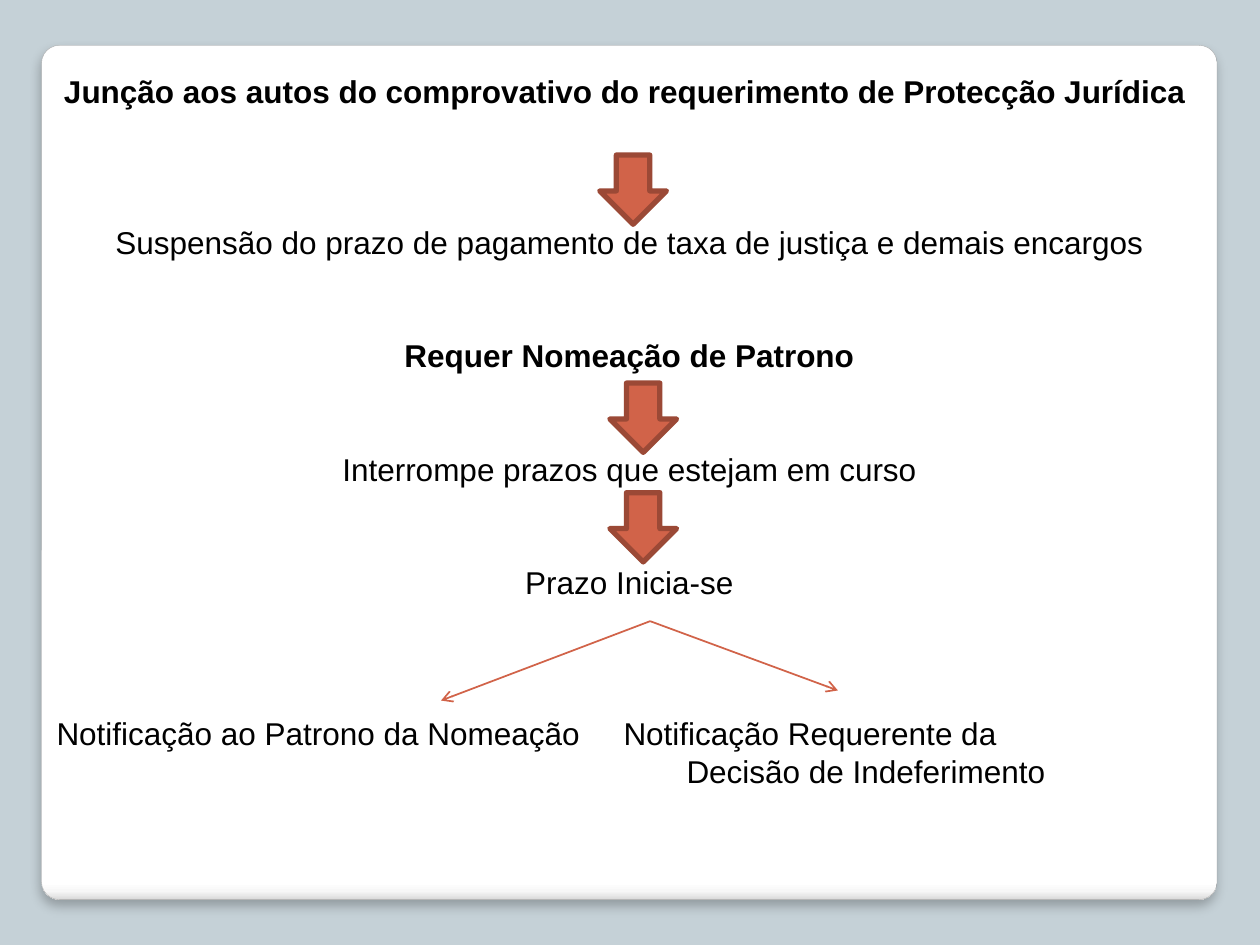
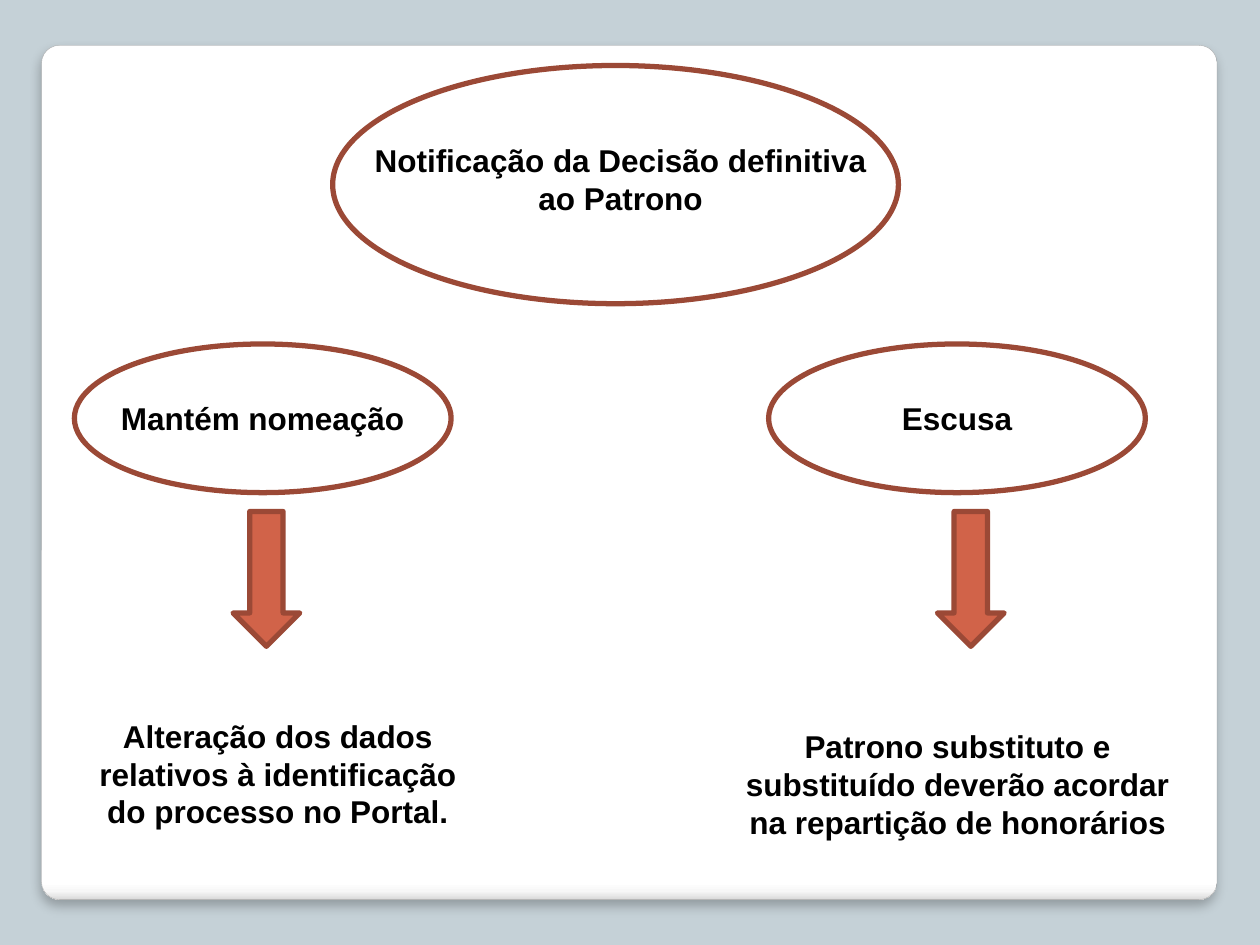
from dataclasses import dataclass
from typing import NamedTuple

from lxml.etree import SubElement
from pptx import Presentation
from pptx.dml.color import RGBColor
from pptx.enum.shapes import MSO_CONNECTOR, MSO_SHAPE
from pptx.enum.text import PP_ALIGN
from pptx.oxml import parse_xml
from pptx.oxml.ns import nsdecls, qn
from pptx.util import Emu, Inches, Pt


@dataclass(frozen=True)
class Theme:
    background: str = "C5D1D7"
    white: str = "FFFFFF"
    panel_line: str = "A4A4A4"
    accent: str = "D16349"
    accent_dark: str = "9B4936"
    ink: str = "000000"
    font: str = "Arial"
    size: float = 18
    line_pitch: float = 21.6
    outline: float = 3
    thin: float = 1


class Box(NamedTuple):
    """Place and size in grid columns and rows."""
    col: float
    row: float
    cols: float
    rows: float


class Step(NamedTuple):
    text: str
    bold: bool = False
    blank_lines: int = 0
    centred: bool = True
    indent: float = 0


class Bubble(NamedTuple):
    outline: Box
    label: Box
    text: str


THEME = Theme()
COLS, ROWS = 100, 75
SLIDE_W, SLIDE_H = Inches(10), Inches(7.5)
PANEL = Box(3.3, 3.6, 93.3, 67.8)
PANEL_STOPS = ((0, "FFFFFF"), (98, "FFFFFF"), (99, "F7F7F7"), (100, "DADADA"))
ARROW_COLS = 5.3


def x(cols: float) -> Emu:
    return Emu(round(SLIDE_W * cols / COLS))


def y(rows: float) -> Emu:
    return Emu(round(SLIDE_H * rows / ROWS))


def place(box: Box) -> tuple:
    return x(box.col), y(box.row), x(box.cols), y(box.rows)


def add_outlined(slide, kind, box: Box, fill: str, line: str, width: float):
    sp = slide.shapes.add_shape(kind, *place(box))
    sp.shadow.inherit = False
    sp.fill.solid()
    sp.fill.fore_color.rgb = RGBColor.from_string(fill)
    sp.line.color.rgb = RGBColor.from_string(line)
    sp.line.width = Pt(width)
    return sp


def add_panel(slide) -> None:
    sp = add_outlined(slide, MSO_SHAPE.ROUNDED_RECTANGLE, PANEL,
                      THEME.white, THEME.panel_line, 0.16)
    sp.adjustments[0] = 0.021
    # Shade along the lower edge
    stops = "".join(f'<a:gs pos="{pos * 1000}"><a:srgbClr val="{color}"/></a:gs>'
                    for pos, color in PANEL_STOPS)
    pr = sp.element.spPr
    pr.replace(pr.find(qn("a:solidFill")), parse_xml(
        f'<a:gradFill {nsdecls("a")}><a:gsLst>{stops}</a:gsLst>'
        '<a:lin ang="5400000" scaled="0"/></a:gradFill>'))
    # Soft shadow below
    pr.replace(pr.find(qn("a:effectLst")), parse_xml(
        f'<a:effectLst {nsdecls("a")}><a:outerShdw blurRad="{Pt(6)}" dist="{Pt(4)}" '
        'dir="5400000" algn="t" rotWithShape="0"><a:srgbClr val="000000">'
        '<a:alpha val="25000"/></a:srgbClr></a:outerShdw></a:effectLst>'))


def add_steps(slide, box: Box, steps: tuple[Step, ...]) -> None:
    tf = slide.shapes.add_textbox(*place(box)).text_frame
    tf.word_wrap = True
    for i, step in enumerate(steps):
        p = tf.add_paragraph() if i else tf.paragraphs[0]
        p.text = step.text
        p.alignment = PP_ALIGN.CENTER if step.centred else PP_ALIGN.LEFT
        p.line_spacing = Pt(THEME.line_pitch)
        if step.blank_lines:
            p.space_before = Pt(step.blank_lines * THEME.line_pitch)
        if step.indent:
            pPr = p._p.get_or_add_pPr()
            pPr.set("marL", str(x(step.indent)))
            pPr.set("indent", "0")
        for r in p.runs:
            r.font.name = THEME.font
            r.font.size = Pt(THEME.size)
            r.font.bold = step.bold
            r.font.color.rgb = RGBColor.from_string(THEME.ink)


def add_down_arrow(slide, col: float, row: float, rows: float) -> None:
    add_outlined(slide, MSO_SHAPE.DOWN_ARROW, Box(col, row, ARROW_COLS, rows),
                 THEME.accent, THEME.accent_dark, THEME.outline)


def add_branch(slide, start: tuple[float, float], end: tuple[float, float]) -> None:
    cx = slide.shapes.add_connector(MSO_CONNECTOR.STRAIGHT, x(start[0]), y(start[1]),
                                    x(end[0]), y(end[1]))
    cx.line.color.rgb = RGBColor.from_string(THEME.accent)
    cx.line.width = Pt(THEME.thin)
    SubElement(cx.line._get_or_add_ln(), qn("a:tailEnd"), type="arrow")
    SubElement(cx._element.spPr, qn("a:effectLst"))


def add_bubble(slide, bubble: Bubble) -> None:
    add_outlined(slide, MSO_SHAPE.OVAL, bubble.outline,
                 THEME.white, THEME.accent_dark, THEME.outline)
    add_steps(slide, bubble.label, (Step(bubble.text, bold=True),))


# Slide 1: effects of filing the request
REQUEST_BOX = Box(3.5, 5.2, 92.9, 58.6)
REQUEST_STEPS = (
    Step("Junção aos autos do comprovativo do requerimento de Protecção Jurídica ", bold=True),
    Step("Suspensão do prazo de pagamento de taxa de justiça e demais encargos", blank_lines=3),
    Step("Requer Nomeação de Patrono", bold=True, blank_lines=2),
    Step("Interrompe prazos que estejam em curso", blank_lines=2),
    Step("Prazo Inicia-se", blank_lines=2),
    Step("Notificação ao Patrono da Nomeação\tNotificação Requerente da",
         blank_lines=3, centred=False),
    Step("Decisão de Indeferimento", centred=False, indent=50),
)
REQUEST_ARROWS = ((47.6, 12.3), (48.4, 30.4), (48.4, 39.1))
FORK = (51.6, 49.3)
FORK_ENDS = ((35, 55.6), (66.5, 54.8))

# Slide 2: final decision and its two outcomes
DECISION_BUBBLES = (
    Bubble(Box(26.4, 5.2, 44.9, 18.9), Box(28, 10.7, 42.5, 7.1),
           "Notificação da Decisão definitiva ao Patrono"),
    Bubble(Box(5.9, 27.3, 29.9, 11.8), Box(6.7, 31.2, 28.3, 4), "Mantém nomeação"),
    Bubble(Box(61, 27.3, 29.9, 11.8), Box(61, 31.2, 29.9, 4), "Escusa"),
)
DECISION_ARROW_COLS = (18.5, 74.4)
OUTCOMES = (
    (Box(5.1, 56.4, 33.9, 10.1),
     "Alteração dos dados relativos à identificação do processo no Portal."),
    (Box(57.9, 57.2, 36.2, 10.1),
     "Patrono substituto e substituído deverão acordar na repartição de honorários"),
)


def new_slide(prs):
    slide = prs.slides.add_slide(prs.slide_layouts[6])
    add_panel(slide)
    return slide


def build_request(prs) -> None:
    slide = new_slide(prs)
    add_steps(slide, REQUEST_BOX, REQUEST_STEPS)
    for col, row in REQUEST_ARROWS:
        add_down_arrow(slide, col, row, 5.5)
    for end in FORK_ENDS:
        add_branch(slide, FORK, end)


def build_decision(prs) -> None:
    slide = new_slide(prs)
    for bubble in DECISION_BUBBLES:
        add_bubble(slide, bubble)
    for col in DECISION_ARROW_COLS:
        add_down_arrow(slide, col, 40.6, 10.7)
    for box, text in OUTCOMES:
        add_steps(slide, box, (Step(text, bold=True),))


def main() -> None:
    prs = Presentation()
    prs.slide_width, prs.slide_height = SLIDE_W, SLIDE_H
    fill = prs.slide_master.background.fill
    fill.solid()
    fill.fore_color.rgb = RGBColor.from_string(THEME.background)
    build_request(prs)
    build_decision(prs)
    prs.save("out.pptx")


if __name__ == "__main__":
    main()
